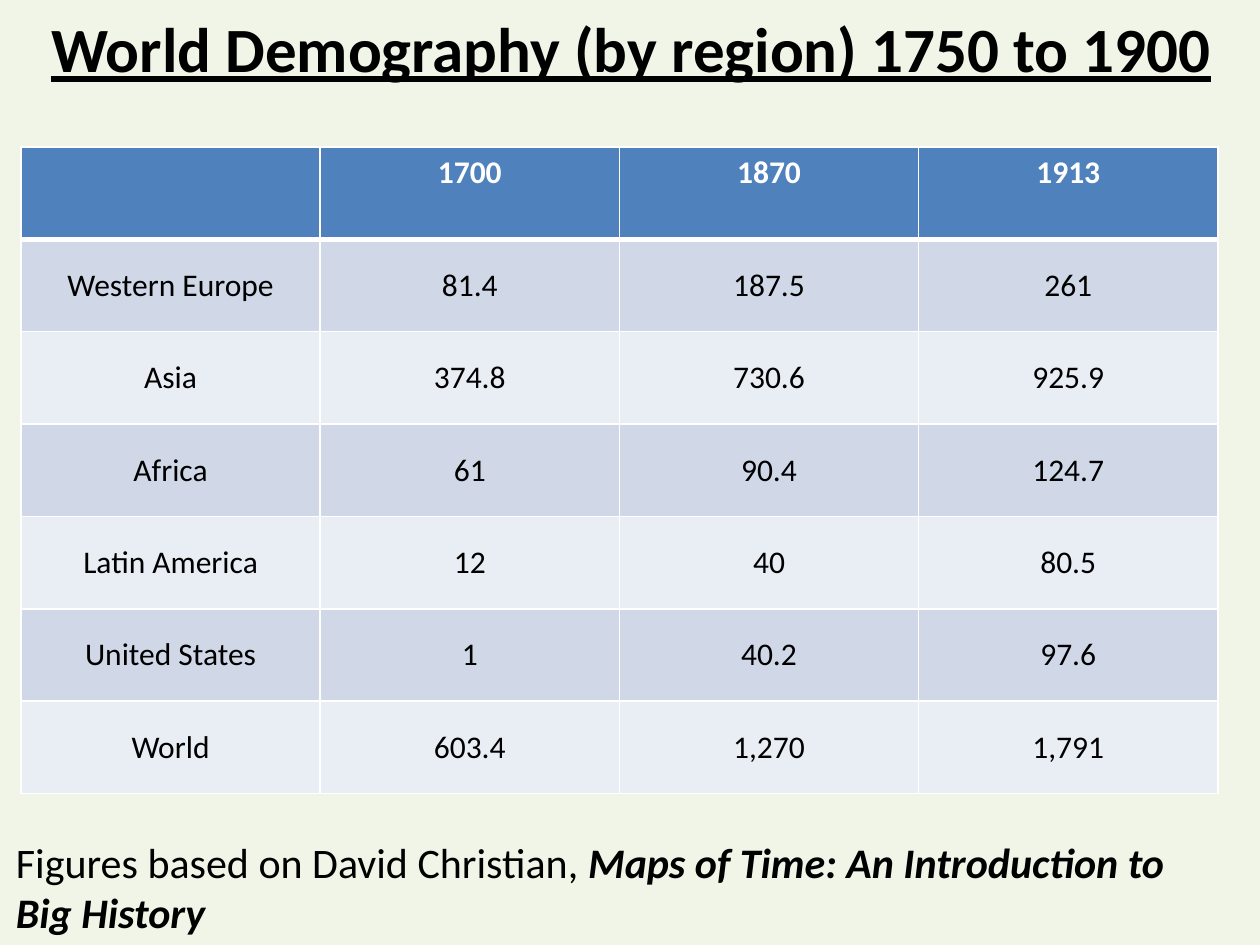
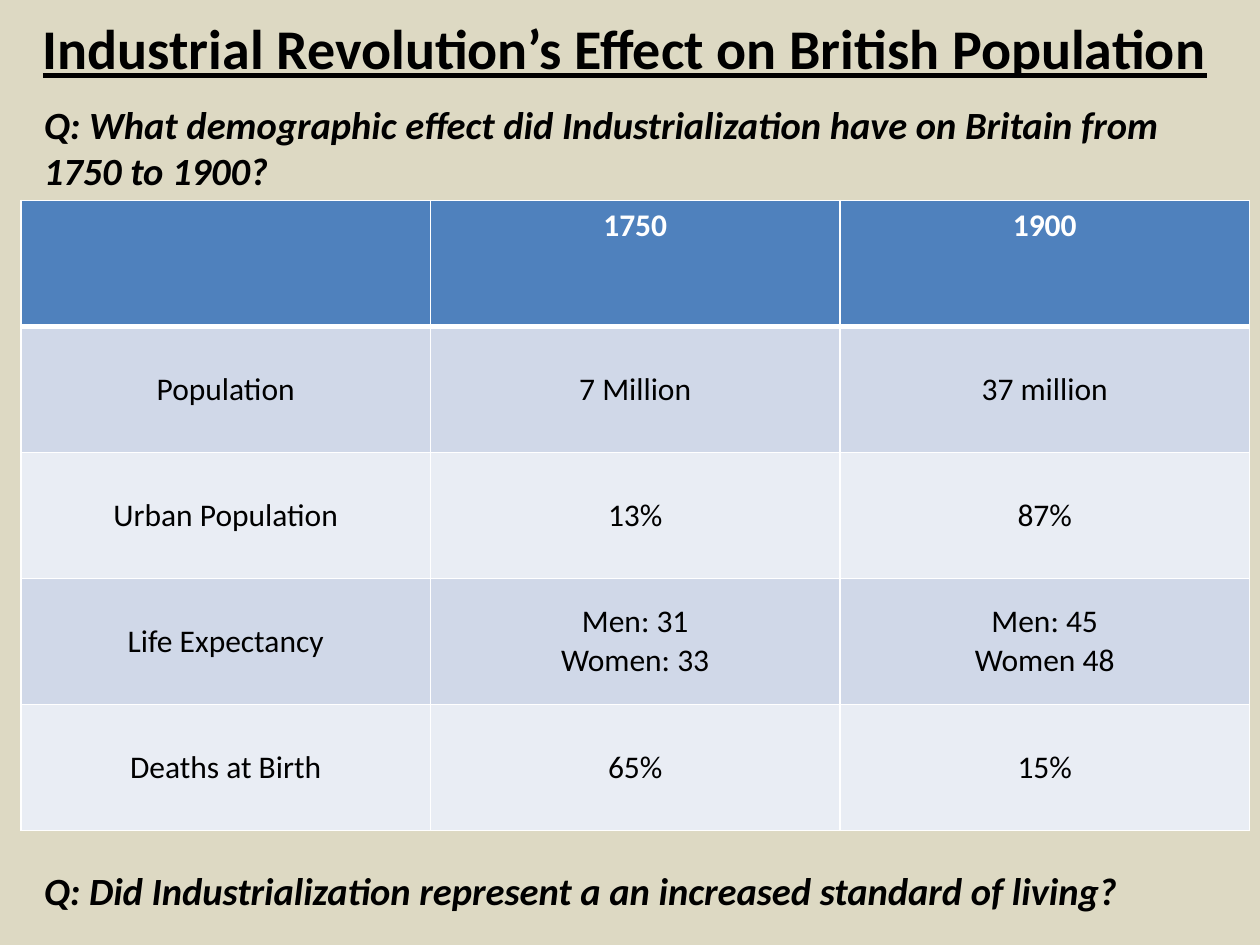
from lxml import etree
from pptx import Presentation
from pptx import util as u
from pptx.dml.color import RGBColor
from pptx.enum import text as t
from pptx.oxml import ns

FONT = "Calibri"
BLACK, WHITE = "000000", "FFFFFF"
HEADER_FILL = "4F81BD"
BAND_FILLS = ["D0D8E8", "E9EDF4"]


def color(hex_value):
    return RGBColor.from_string(hex_value)


def write(frame, content, size, fill=BLACK, bold=False, italic=False, underline=False,
          align=t.PP_ALIGN.LEFT, anchor=t.MSO_ANCHOR.TOP, emphasis=""):
    """Fill a frame, one paragraph a line; emphasis is added in bold italics."""
    frame.word_wrap = True
    frame.vertical_anchor = anchor
    for index, line in enumerate(content.split("\n")):
        paragraph = frame.add_paragraph() if index else frame.paragraphs[0]
        paragraph.alignment = align
        paragraph.font.size = u.Pt(size)
        paragraph.font.name = FONT
        paragraph.font.color.rgb = color(fill)
        run = paragraph.add_run()
        run.text = line
        styled = [(run, bold, italic)]
        if emphasis:
            run = paragraph.add_run()
            run.text = emphasis
            styled.append((run, True, True))
        for run, is_bold, is_italic in styled:
            run.font.size = u.Pt(size)
            run.font.name = FONT
            run.font.color.rgb = color(fill)
            run.font.bold = is_bold
            run.font.italic = is_italic
            run.font.underline = underline


# Content of the slides; boxes are left, top, width, height in points
title_style = dict(bold=True, underline=True, align=t.PP_ALIGN.CENTER,
                   anchor=t.MSO_ANCHOR.MIDDLE)
question_style = dict(size=22, bold=True, italic=True)

slides = [
    dict(
        background="F1F5E8",
        texts=[
            ("World Demography (by region) 1750 to 1900", (0.7, 6, 720, 42),
             dict(title_style, size=36)),
            ("Figures based on David Christian, ", (2, 474.5, 702, 65.5),
             dict(size=24, emphasis="Maps of Time: An Introduction to Big History")),
        ],
        table_box=(12, 84, 684, 369.6),
        rows=[
            ["", "1700", "1870", "1913"],
            ["Western Europe", "81.4", "187.5", "261"],
            ["Asia", "374.8", "730.6", "925.9"],
            ["Africa", "61", "90.4", "124.7"],
            ["Latin America", "12", "40", "80.5"],
            ["United States", "1", "40.2", "97.6"],
            ["World", "603.4", "1,270", "1,791"],
        ],
    ),
    dict(
        background="DDD9C3",
        texts=[
            ("Industrial Revolution’s Effect on British Population", (0, 6, 714, 42),
             dict(title_style, size=32)),
            ("Q: What demographic effect did Industrialization have on Britain from "
             "1750 to 1900?", (18, 54, 690, 60.5), question_style),
            ("Q: Did Industrialization represent a an increased standard of living?",
             (18, 492, 690, 34), question_style),
        ],
        table_box=(12, 114.5, 702, 360),
        rows=[
            ["", "1750", "1900"],
            ["Population", "7 Million", "37 million"],
            ["Urban Population", "13%", "87%"],
            ["Life Expectancy", "Men: 31\nWomen: 33", "Men: 45\nWomen 48"],
            ["Deaths at Birth", "65%", "15%"],
        ],
    ),
]

presentation = Presentation()
presentation.slide_width, presentation.slide_height = u.Pt(720), u.Pt(540)

for content in slides:
    slide = presentation.slides.add_slide(presentation.slide_layouts[6])
    slide.background.fill.solid()
    slide.background.fill.fore_color.rgb = color(content["background"])

    # Title, questions and source
    for wording, box, style in content["texts"]:
        shape = slide.shapes.add_textbox(*map(u.Pt, box))
        write(shape.text_frame, wording, **style)

    # Table with equal columns and rows
    rows = content["rows"]
    table = slide.shapes.add_table(len(rows), len(rows[0]),
                                   *map(u.Pt, content["table_box"])).table
    for row_index, row in enumerate(rows):
        is_header = row_index == 0
        for column_index, value in enumerate(row):
            cell = table.cell(row_index, column_index)
            if value:
                write(cell.text_frame, value, 18, fill=WHITE if is_header else BLACK,
                      bold=is_header, align=t.PP_ALIGN.CENTER)
            cell.vertical_anchor = t.MSO_ANCHOR.TOP if is_header else t.MSO_ANCHOR.MIDDLE

            # White borders, heavier around the header's lower edge
            for side in "LRTB":
                heavy = (is_header and side == "B") or (row_index == 1 and side == "T")
                border = etree.SubElement(cell._tc.get_or_add_tcPr(), ns.qn(f"a:ln{side}"),
                                          w=str(u.Pt(3 if heavy else 1)))
                solid = etree.SubElement(border, ns.qn("a:solidFill"))
                etree.SubElement(solid, ns.qn("a:srgbClr"), val=WHITE)

            cell.fill.solid()
            cell.fill.fore_color.rgb = color(
                HEADER_FILL if is_header else BAND_FILLS[(row_index - 1) % 2])

presentation.save("out.pptx")
